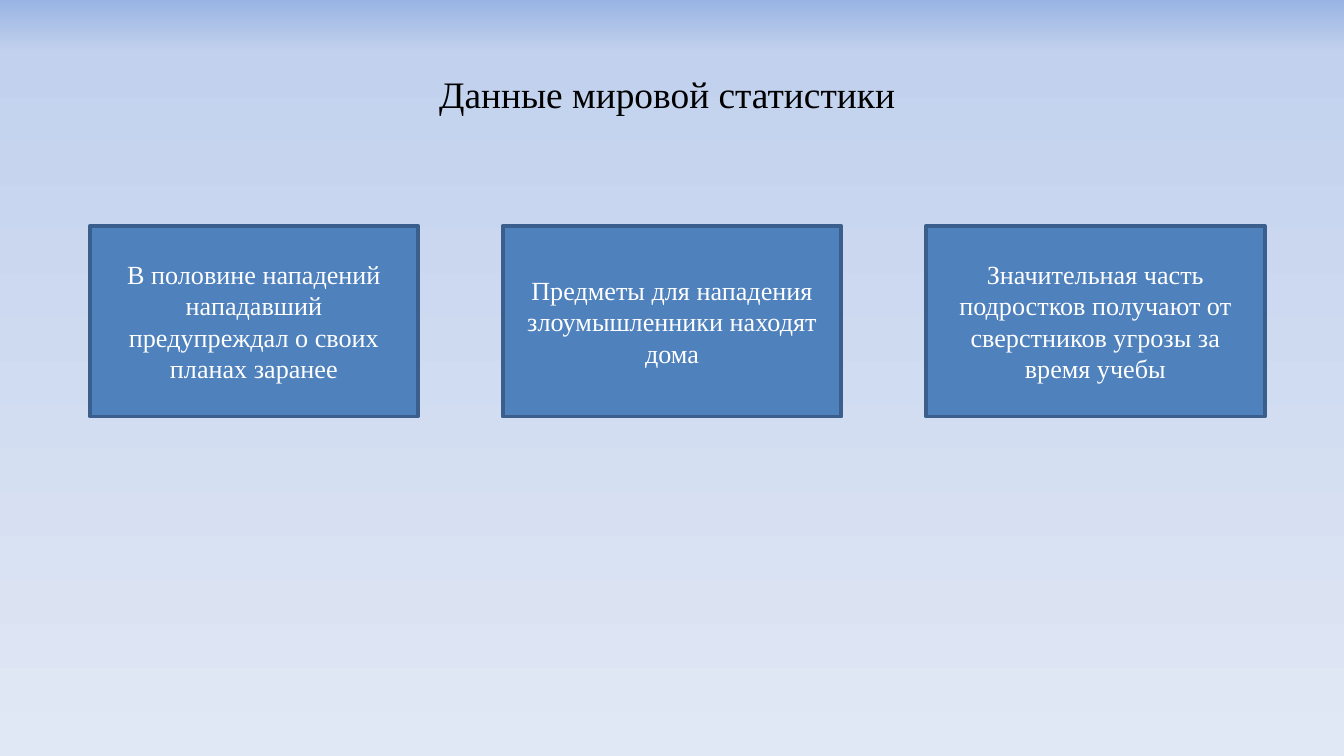
from copy import deepcopy
from dataclasses import dataclass

from pptx import Presentation
from pptx import util as u
from pptx.dml import color
from pptx.enum import shapes, text
from pptx.oxml import ns


@dataclass(frozen=True)
class Theme:
    font: str = "Times New Roman"
    title_size: int = 20
    card_size: int = 14
    title_color: str = "000000"
    card_text: str = "FFFFFF"
    card_fill: str = "4F81BD"
    card_line: str = "3A5F8C"
    line_width: int = 2
    backdrop: tuple = ((0, "9AB5E4"), (0.07, "C2D1ED"), (1, "E1E8F5"))


THEME = Theme()
TITLE = "Данные мировой статистики "
TITLE_BOX = (0.5, 0.23, 9, 0.94)
CARDS_BOX = (0.67, 1.68, 8.74, 1.42)
CARD_GAP = 0.63
CARDS = (
    (2.44, "В половине нападений нападавший предупреждал о своих планах заранее"),
    (2.52, "Предметы для нападения злоумышленники находят дома"),
    (2.52, "Значительная часть подростков получают от сверстников угрозы за время учебы"),
)


def rgb(value):
    return color.RGBColor.from_string(value)


def paint_backdrop(page):
    fill = page.background.fill
    fill.gradient()
    fill.gradient_angle = 270
    stop_list = page.background._cSld.find(".//" + ns.qn("a:gsLst"))
    stop_list.append(deepcopy(stop_list[-1]))
    for stop, (position, value) in zip(fill.gradient_stops, THEME.backdrop):
        stop.position = position
        stop.color.rgb = rgb(value)


def write(shape, words, size, ink):
    frame = shape.text_frame
    frame_format = {"word_wrap": True, "vertical_anchor": text.MSO_ANCHOR.MIDDLE}
    for name, value in frame_format.items():
        setattr(frame, name, value)
    para = frame.paragraphs[0]
    para.alignment = text.PP_ALIGN.CENTER
    span = para.add_run()
    span.text = words
    for name, value in {"name": THEME.font, "size": u.Pt(size)}.items():
        setattr(span.font, name, value)
    span.font.color.rgb = rgb(ink)


def add_title(page, box):
    title = page.shapes.add_textbox(*map(u.Inches, box))
    write(title, TITLE, THEME.title_size, THEME.title_color)


def add_cards(page, box):
    left, top, _, height = box
    for width, words in CARDS:
        card = page.shapes.add_shape(
            shapes.MSO_SHAPE.RECTANGLE, *map(u.Inches, (left, top, width, height))
        )
        card.shadow.inherit = False
        card.fill.solid()
        card.fill.fore_color.rgb = rgb(THEME.card_fill)
        card.line.color.rgb = rgb(THEME.card_line)
        card.line.width = u.Pt(THEME.line_width)
        write(card, words, THEME.card_size, THEME.card_text)
        left += width + CARD_GAP


def main():
    deck = Presentation()
    deck.slide_width = u.Inches(10)
    deck.slide_height = deck.slide_width * 9 // 16
    page = deck.slides.add_slide(deck.slide_layouts[6])
    paint_backdrop(page)
    add_title(page, TITLE_BOX)
    add_cards(page, CARDS_BOX)
    deck.save("out.pptx")


if __name__ == "__main__":
    main()
